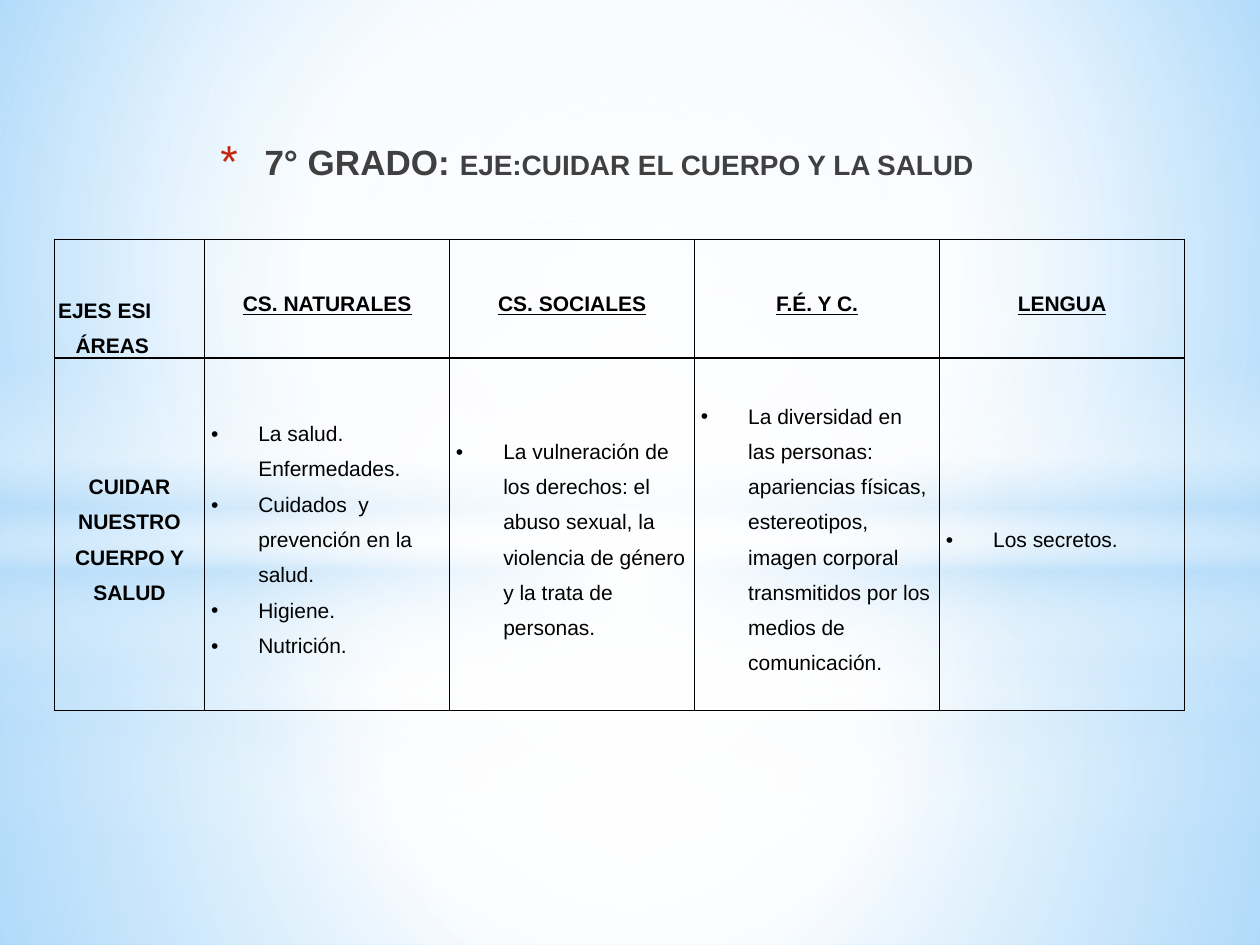
from pptx import Presentation
from pptx.dml.color import RGBColor
from pptx.enum.shapes import MSO_SHAPE
from pptx.enum.text import MSO_ANCHOR, PP_ALIGN
from pptx.oxml import parse_xml
from pptx.oxml.ns import qn
from pptx.util import Pt

RECT, OVAL = MSO_SHAPE.RECTANGLE, MSO_SHAPE.OVAL
LEFT, CENTER, RIGHT = PP_ALIGN.LEFT, PP_ALIGN.CENTER, PP_ALIGN.RIGHT
MIDDLE, BOTTOM = MSO_ANCHOR.MIDDLE, MSO_ANCHOR.BOTTOM
NS = 'xmlns:a="http://schemas.openxmlformats.org/drawingml/2006/main"'
WIDE, HIGH = 720, 540
WHITE, SKY, BLACK = "FFFFFF", "B4DCFA", "000000"
MID = (50, 50, 50, 50)

HEADS = ["CS. NATURALES", "CS. SOCIALES", "F.É. Y C.", "LENGUA"]
TOPICS = [
    ["La salud. Enfermedades.", "Cuidados  y prevención en la salud.",
     "Higiene.", "Nutrición."],
    ["La vulneración de los derechos: el abuso sexual, la violencia de "
     "género y la trata de personas."],
    ["La diversidad en las personas: apariencias físicas, estereotipos, "
     "imagen corporal transmitidos por los medios de comunicación."],
    ["Los secretos."],
]


def color(code):
    return RGBColor.from_string(code)


def shade(fill, root, stops, focus=None):
    """Gradient of (position, colour, opacity); radial if it has a focus."""
    fill.background()
    marks = "".join(
        f'<a:gs pos="{pos * 1000}"><a:srgbClr val="{code}">'
        f'<a:alpha val="{alpha * 1000}"/></a:srgbClr></a:gs>'
        for pos, code, alpha in stops)
    if focus:
        sides = " ".join(f'{side}="{val * 1000}"' for side, val in zip("ltrb", focus))
        way = f'<a:path path="circle"><a:fillToRect {sides}/></a:path>'
    else:
        way = '<a:lin ang="5400000" scaled="0"/>'
    grad = parse_xml(f'<a:gradFill {NS} rotWithShape="1">'
                     f'<a:gsLst>{marks}</a:gsLst>{way}</a:gradFill>')
    old = next(root.iter(qn("a:noFill")))
    old.getparent().replace(old, grad)


def glow(slide, kind, top, height, stops, focus=None):
    shape = slide.shapes.add_shape(kind, Pt(0), Pt(top), Pt(WIDE), Pt(height))
    shape.shadow.inherit = False
    shade(shape.fill, shape.element, stops, focus)
    shape.line.fill.background()


def write(para, text, size=12, bold=False, under=False, ink=BLACK):
    run = para.add_run()
    run.text = text
    font = run.font
    font.name, font.size, font.bold = "Arial", Pt(size), bold
    font.underline = under
    font.color.rgb = color(ink)


def bullet(para, char, indent, extra=""):
    props = para._p.get_or_add_pPr()
    props.set("marL", str(Pt(indent)))
    props.set("indent", str(-Pt(indent)))
    for part in (extra, f'<a:buFont {NS} typeface="Arial"/>',
                 f'<a:buChar {NS} char="{char}"/>'):
        if part:
            props.append(parse_xml(part))


def backdrop(slide):
    back = slide.background
    shade(back.fill, slide.element,
          [(0, "9ED5FF", 100), (60, WHITE, 100), (100, "5BB9FF", 100)],
          (20, 10, 20, 60))
    # Two layers: horizon, start of the stripe, opacity step, end of the halo
    for split, start, step, edge in ((402, 296.6, 0, 56), (304.6, 208.8, 1, 54)):
        glow(slide, RECT, split, HIGH - split,
             [(0, WHITE, 91 + step), (37, WHITE, 76 + step), (100, SKY, 79 + step)], MID)
        glow(slide, RECT, 0, split,
             [(0, WHITE, 89 + step), (48, WHITE, 62 + step), (100, SKY, 79 + step)], MID)
        glow(slide, RECT, start, 180,
             [(0, WHITE, 0), (29, WHITE, 30), (45, SKY, 40),
              (55, WHITE, 26), (65, SKY, 60), (100, WHITE, 0)])
        glow(slide, OVAL, 126, 402, [(0, WHITE, 100), (edge, WHITE, 0)], MID)


def heading(slide, left, top, width, height):
    box = slide.shapes.add_textbox(Pt(left), Pt(top), Pt(width), Pt(height))
    frame = box.text_frame
    frame.word_wrap = True
    frame.vertical_anchor = BOTTOM
    para = frame.paragraphs[0]
    para.alignment = RIGHT
    bullet(para, "*", 25.2,
           f'<a:buClr {NS}><a:srgbClr val="C3260C"/></a:buClr>')
    size = parse_xml(f'<a:buSzPct {NS} val="128000"/>')
    para._p.pPr.find(qn("a:buClr")).addnext(size)
    write(para, "7° GRADO: ", size=20, bold=True, ink="404040")
    write(para, "EJE:CUIDAR EL CUERPO Y LA SALUD", size=16, bold=True, ink="404040")


def fill_cell(cell, lines, align=LEFT, anchor=MIDDLE, inset=3.6, dots=False, **style):
    cell.margin_left = cell.margin_right = Pt(inset)
    cell.margin_top = cell.margin_bottom = Pt(0)
    cell.vertical_anchor = anchor
    props = cell._tc.get_or_add_tcPr()
    for side in "LRTB":
        props.append(parse_xml(
            f'<a:ln{side} {NS} w="{Pt(1)}"><a:solidFill>'
            f'<a:srgbClr val="{BLACK}"/></a:solidFill></a:ln{side}>'))
    cell.fill.background()
    frame = cell.text_frame
    for num, line in enumerate(lines):
        para = frame.add_paragraph() if num else frame.paragraphs[0]
        para.alignment = align
        para.line_spacing = 1.5
        if dots:
            bullet(para, "•", 27)
        write(para, line, **style)


def grid(slide, left, top, width, height):
    first, head = 86, 67.7
    count = len(HEADS)
    frame = slide.shapes.add_table(2, count + 1, Pt(left), Pt(top), Pt(width), Pt(height))
    table = frame.table
    table.first_row = table.horz_banding = False
    for num, col in enumerate(table.columns):
        col.width = Pt((width - first) / count if num else first)
    table.rows[0].height, table.rows[1].height = Pt(head), Pt(height - head)

    # Row labels
    corner = table.cell(0, 0)
    fill_cell(corner, ["EJES ESI", "ÁREAS"], anchor=BOTTOM, inset=2.2, bold=True)
    corner.text_frame.paragraphs[1]._p.get_or_add_pPr().set("marL", str(Pt(10)))
    fill_cell(table.cell(1, 0), ["CUIDAR NUESTRO CUERPO Y SALUD"], CENTER, bold=True)

    # Subject columns
    for num, (name, topics) in enumerate(zip(HEADS, TOPICS), 1):
        fill_cell(table.cell(0, num), [name], CENTER, inset=2.2, bold=True, under=True)
        fill_cell(table.cell(1, num), topics, dots=True)


def main():
    deck = Presentation()
    deck.slide_width, deck.slide_height = Pt(WIDE), Pt(HIGH)
    slide = deck.slides.add_slide(deck.slide_layouts[6])
    backdrop(slide)
    heading(slide, 93.6, 49, 470, 59)
    grid(slide, 31, 136.8, 646, 269.3)
    deck.save("out.pptx")


if __name__ == "__main__":
    main()
